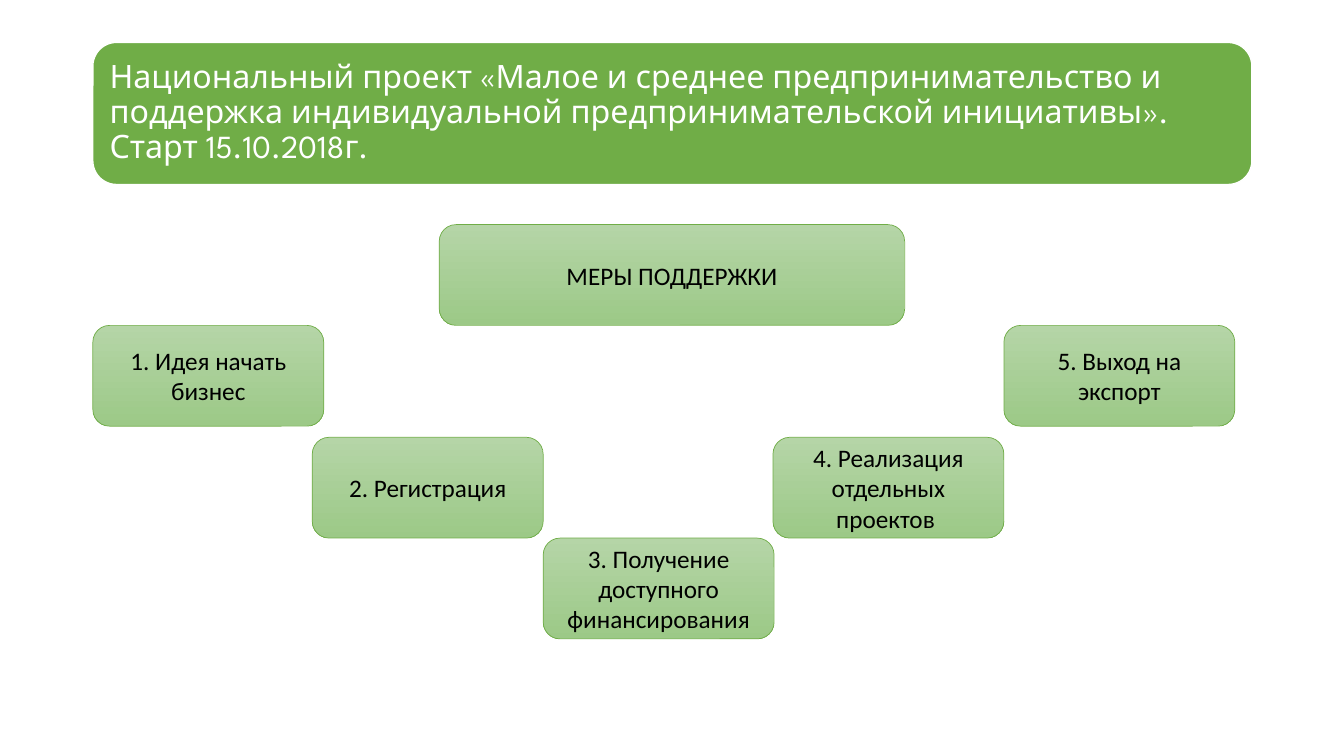
"""Build the slide on support measures for small business."""
from pptx import Presentation, util as u
from pptx.dml.color import RGBColor
from pptx.enum import shapes, text

COLORS = {"banner": "70AD47", "light": "B5D5A7", "dark": "9CC987",
          "white": "FFFFFF", "black": "000000"}
RGB = {name: RGBColor.from_string(value) for name, value in COLORS.items()}


def add_box(left, top, width, height):
    box = page.shapes.add_shape(shapes.MSO_SHAPE.ROUNDED_RECTANGLE,
                                u.Cm(left), u.Cm(top), u.Cm(width), u.Cm(height))
    box.shadow.inherit = False
    return box


def write(box, words, align, font_format):
    frame = box.text_frame
    frame.word_wrap = True
    frame.auto_size = text.MSO_AUTO_SIZE.NONE
    frame.vertical_anchor = text.MSO_ANCHOR.MIDDLE
    para = frame.paragraphs[0]
    para.alignment = align
    span = para.add_run()
    span.text = words
    for name, value in font_format.items():
        setattr(span.font, name, value)
    span.font.color.rgb = RGB["white" if box == title else "black"]
    return para


deck = Presentation()
deck.slide_width, deck.slide_height = u.Cm(33.87), u.Cm(19.05)
page = deck.slides.add_slide(deck.slide_layouts[5])
title = page.shapes.title

banner = add_box(2.34, 1.07, 29.21, 3.58)
banner.fill.solid()
banner.fill.fore_color.rgb = RGB["banner"]
banner.line.color.rgb = RGB["white"]
banner.line.width = u.Pt(1)

title_format = {"left": 2.51, "top": 1.24, "width": 28.85, "height": 3.23}
for name, value in title_format.items():
    setattr(title, name, u.Cm(value))
for side in ("left", "top", "right", "bottom"):
    setattr(title.text_frame, f"margin_{side}", u.Cm(0.25))
heading = write(title, "Национальный проект «Малое и среднее предпринимательство и поддержка "
                "индивидуальной предпринимательской инициативы». Старт 15.10.2018г.",
                text.PP_ALIGN.LEFT, {"name": "League Spartan", "size": u.Pt(23)})
heading.line_spacing = 0.9
page.shapes._spTree.append(title._element)

STEP_WIDTH = 5.82
measures = [
    ("МЕРЫ ПОДДЕРЖКИ", 11.07, 5.66, 11.73),
    ("1. Идея начать бизнес", 2.34, 8.2, STEP_WIDTH),
    ("2. Регистрация", 7.87, 11.02, STEP_WIDTH),
    ("3. Получение доступного финансирования", 13.69, 13.56, STEP_WIDTH),
    ("4. Реализация отдельных проектов ", 19.48, 11.02, STEP_WIDTH),
    ("5. Выход на экспорт", 25.3, 8.2, STEP_WIDTH),
]
for words, left, top, width in measures:
    box = add_box(left, top, width, 2.54)
    box.fill.gradient()
    box.fill.gradient_angle = 270
    for stop, shade in zip(box.fill.gradient_stops, ("light", "dark")):
        stop.color.rgb = RGB[shade]
    box.line.color.rgb = RGB["banner"]
    box.line.width = u.Pt(0.5)
    write(box, words, text.PP_ALIGN.CENTER, {"name": "Calibri", "size": u.Pt(18)})

deck.save("out.pptx")
